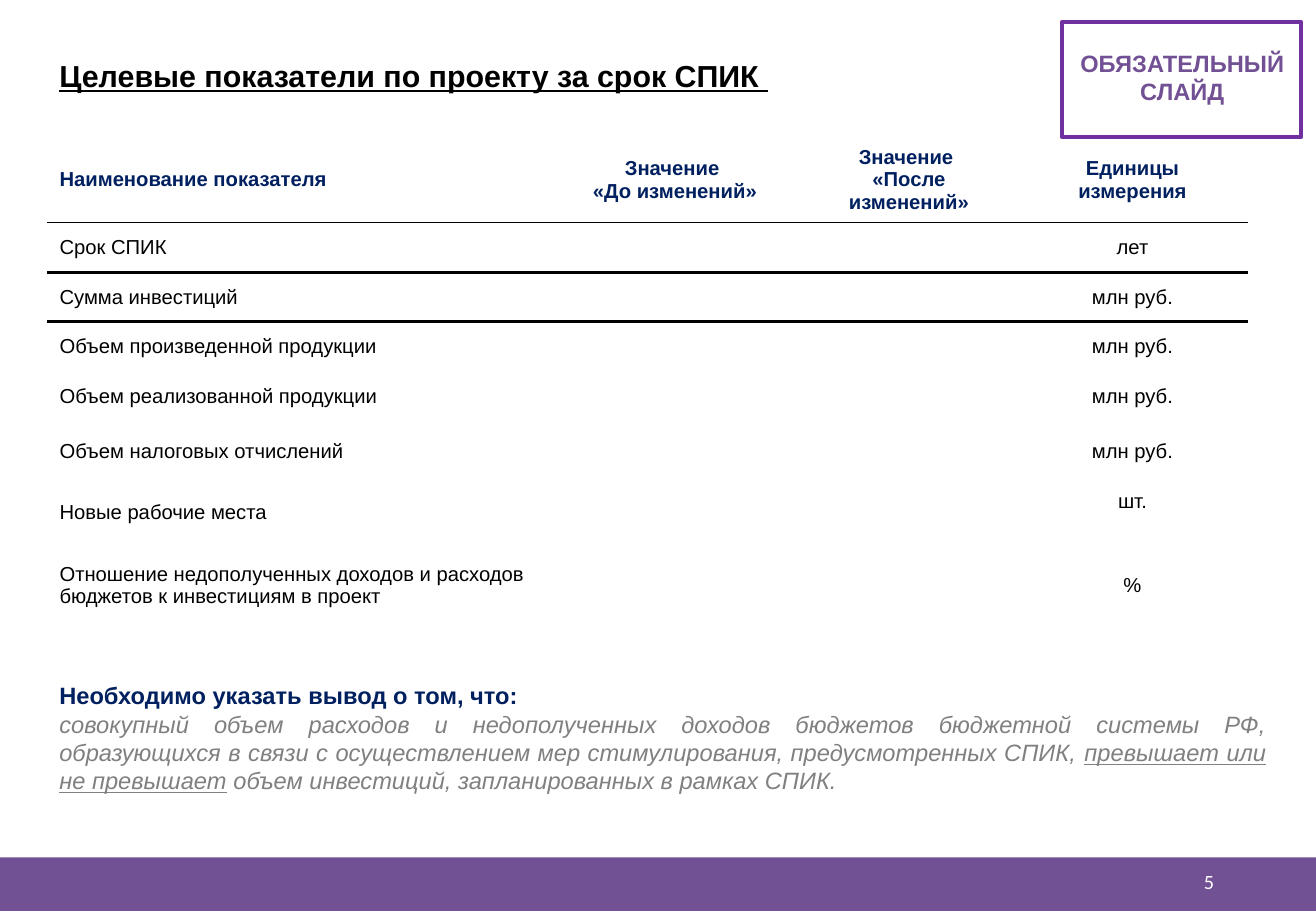
from lxml import etree
from pptx import Presentation
from pptx.dml.color import RGBColor
from pptx.enum.shapes import MSO_SHAPE
from pptx.enum.text import MSO_ANCHOR, PP_ALIGN
from pptx.oxml.ns import qn
from pptx.util import Inches, Pt

RECTANGLE = MSO_SHAPE.RECTANGLE
TOP, MIDDLE = MSO_ANCHOR.TOP, MSO_ANCHOR.MIDDLE
LEFT, CENTER, RIGHT, JUSTIFY = PP_ALIGN.LEFT, PP_ALIGN.CENTER, PP_ALIGN.RIGHT, PP_ALIGN.JUSTIFY

COLORS = {
    "band": "725094",
    "frame": "7030A0",
    "navy": "002060",
    "gray": "808080",
    "black": "000000",
    "white": "FFFFFF",
}
PLAIN_TABLE_STYLE = "{2D5ABB26-0587-4C30-8999-92F81FD0307C}"
SLIDE_WIDTH, SLIDE_HEIGHT = 10.83, 7.5
MARGIN = 0.39

COLUMN_WIDTHS = [4.13, 2.07, 1.78, 1.9]
ROW_HEIGHTS = [0.68, 0.41, 0.41, 0.41, 0.41, 0.5, 0.5, 0.7]
HEADINGS = [
    "Наименование показателя",
    "Значение \n«До изменений»",
    "Значение \n«После изменений»",
    "Единицы измерения",
]
INDICATORS = [
    ("Срок СПИК", "лет"),
    ("Сумма инвестиций", "млн руб."),
    ("Объем произведенной продукции", "млн руб."),
    ("Объем реализованной продукции", "млн руб."),
    ("Объем налоговых отчислений", "млн руб."),
    ("Новые рабочие места", "шт."),
    ("Отношение недополученных доходов и расходов бюджетов к инвестициям в проект", "%"),
]
JOBS_ROW = 6
CONCLUSION = [
    ("совокупный объем расходов и недополученных доходов бюджетов бюджетной системы РФ, "
     "образующихся в связи с осуществлением мер стимулирования, предусмотренных СПИК, ", False),
    ("превышает или не превышает", True),
    (" объем инвестиций, запланированных в рамках СПИК.", False),
]


def rgb(name):
    return RGBColor.from_string(COLORS[name])


def style_font(font, size, color, bold=False, name="Arial"):
    font.name = name
    font.size = Pt(size)
    font.bold = bold
    font.color.rgb = rgb(color)


def style_text(frame, size, color, bold=False, align=LEFT, name="Arial"):
    for para in frame.paragraphs:
        para.alignment = align
        style_font(para.font, size, color, bold, name)
        for span in para.runs:
            style_font(span.font, size, color, bold, name)


def add_text(page, left, top, width, height, text, wrap=True, anchor=TOP):
    box = page.shapes.add_textbox(Inches(left), Inches(top), Inches(width), Inches(height))
    frame = box.text_frame
    frame.word_wrap = wrap
    frame.vertical_anchor = anchor
    frame.text = text
    return frame


def add_rectangle(page, left, top, width, height):
    shape = page.shapes.add_shape(
        RECTANGLE, Inches(left), Inches(top), Inches(width), Inches(height))
    shape.shadow.inherit = False
    return shape


def add_footer(page, left, top, width, height):
    band = add_rectangle(page, left, top, width, height)
    band.fill.solid()
    band.fill.fore_color.rgb = rgb("band")
    band.line.fill.background()
    number = add_text(page, left + 7.65, top, 2.44, 0.4, "5", anchor=MIDDLE)
    style_text(number, 12, "white", align=RIGHT, name="Calibri")


def add_title(page, left, top, width, height):
    frame = add_text(page, left, top, width, height, "Целевые показатели по проекту за срок СПИК ")
    style_text(frame, 18, "black", bold=True)
    frame.paragraphs[0].runs[0].font.underline = True


def set_border(cell, side, points):
    properties = cell._tc.get_or_add_tcPr()
    line = etree.Element(qn(f"a:{side}"), w=str(Pt(points)))
    fill = etree.SubElement(line, qn("a:solidFill"))
    etree.SubElement(fill, qn("a:srgbClr"), val=COLORS["black"])
    borders = [child for child in properties if child.tag in (qn("a:lnT"), qn("a:lnB"))]
    properties.insert(len(borders), line)


def add_indicator_table(page, left, top, width, height):
    rows = [HEADINGS] + [[name, "", "", unit] for name, unit in INDICATORS]
    frame = page.shapes.add_table(
        len(rows), len(HEADINGS), Inches(left), Inches(top), Inches(width), Inches(height))
    table = frame.table
    table.first_row = False
    table.horz_banding = False
    table._tbl.tblPr.find(qn("a:tableStyleId")).text = PLAIN_TABLE_STYLE
    for column, column_width in zip(table.columns, COLUMN_WIDTHS):
        column.width = Inches(column_width)
    for r, (texts, row_height) in enumerate(zip(rows, ROW_HEIGHTS)):
        table.rows[r].height = Inches(row_height)
        for c, text in enumerate(texts):
            cell = table.cell(r, c)
            cell.text_frame.text = text
            cell.vertical_anchor = MIDDLE
            cell.fill.background()
            style_text(cell.text_frame, 12, "black" if r else "navy",
                       bold=r == 0, align=CENTER if c else LEFT)
            if r in (1, 2):
                set_border(cell, "lnT", r)
            if r in (0, 1):
                set_border(cell, "lnB", r + 1)
    table.cell(JOBS_ROW, 3).margin_bottom = Inches(0.23)


def add_required_badge(page, left, top, width, height):
    badge = add_rectangle(page, left, top, width, height)
    badge.fill.background()
    badge.line.color.rgb = rgb("frame")
    badge.line.width = Pt(2.25)
    label = add_text(page, left + 0.04, top + 0.17, 1.9, 0.57, "ОБЯЗАТЕЛЬНЫЙ\nСЛАЙД", wrap=False)
    style_text(label, 14, "band", bold=True, align=CENTER)


def add_conclusion(page, left, top, width, height):
    frame = add_text(page, left, top, width, height, "Необходимо указать вывод о том, что:")
    style_text(frame, 14, "navy", bold=True)
    para = frame.add_paragraph()
    para.alignment = JUSTIFY
    para.space_after = Pt(12)
    for text, underlined in CONCLUSION:
        span = para.add_run()
        span.text = text
        style_font(span.font, 14, "gray")
        span.font.italic = True
        span.font.underline = underlined


def main():
    deck = Presentation()
    deck.slide_width = Inches(SLIDE_WIDTH)
    deck.slide_height = Inches(SLIDE_HEIGHT)
    page = deck.slides.add_slide(deck.slide_layouts[6])
    add_footer(page, 0, 7.06, SLIDE_WIDTH, 0.44)
    add_title(page, MARGIN, 0.42, 7.47, 0.4)
    add_indicator_table(page, MARGIN, 1.13, sum(COLUMN_WIDTHS), sum(ROW_HEIGHTS))
    add_required_badge(page, 8.74, 0.18, 1.97, 0.95)
    add_conclusion(page, MARGIN, 5.56, 10.13, 1.04)
    deck.save("out.pptx")


if __name__ == "__main__":
    main()
